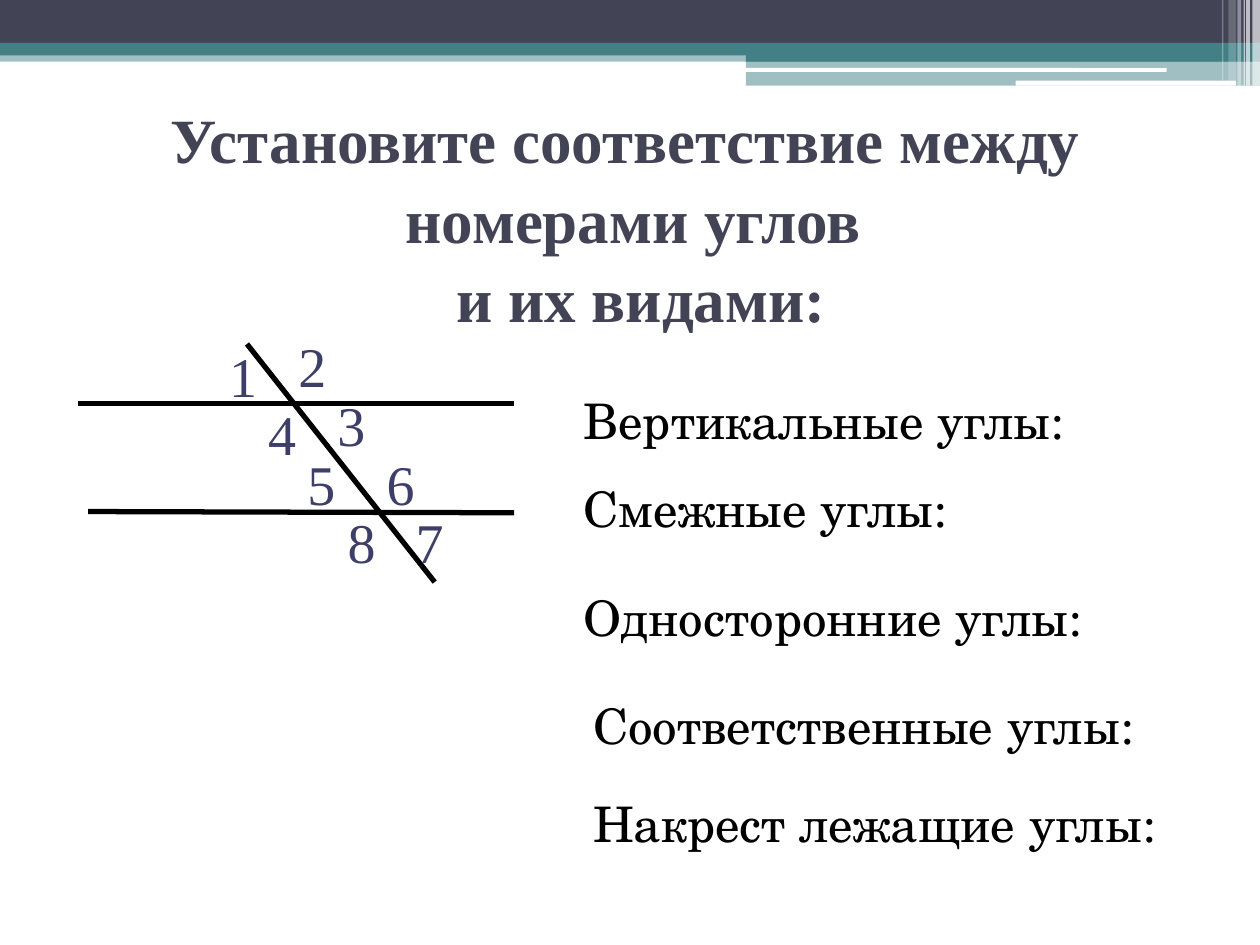
import pptx
import pptx.dml.color
import pptx.enum.shapes
import pptx.enum.text
import pptx.oxml.ns
import pptx.util
from lxml import etree

Inches = pptx.util.Inches
COLORS = {"slate": "424456", "teal": "438086", "white": "FFFFFF",
          "black": "000000", "digit": "3E3F68"}
SERIF, SCHOOL = "Times New Roman", "TeX Gyre Schola"

BANDS = [
    (0, 0.4, 10, 0.09, "teal", 50),
    (0, 0, 10, 0.34, "slate", 100),
    (0, 0.34, 10, 0.1, "teal", 100),
    (5.92, 0.39, 4.08, 0.1, "teal", 100),
    (5.92, 0.48, 4.08, 0.2, "teal", 50),
]
PILLS = [(5.91, 0.54, 3.35, 0.03), (8.06, 0.64, 1.75, 0.04)]
STRIPES = [(9.94, 0.06, 0.68, 65), (9.89, 0.03, 0.68, 65), (9.87, 0.01, 0.68, 60),
           (9.82, 0.03, 0.68, 40), (9.75, 0.06, 0.64, 20), (9.7, 0.01, 0.64, 30)]
LINES = [(0.62, 3.2, 4.08, 3.2), (0.7, 4.06, 4.08, 4.07), (1.96, 2.73, 3.45, 4.62)]
ANGLES = [(1.72, 2.66), (2.27, 2.58), (2.58, 3.05), (2.03, 3.12),
          (2.34, 3.52), (2.97, 3.52), (3.2, 3.98), (2.66, 3.98)]
KINDS = [
    ("Вертикальные углы:", 4.53, 3.05, 4.69),
    ("Смежные углы:", 4.53, 3.75, 4.12),
    ("Односторонние углы:", 4.53, 4.61, 4.35),
    ("Соответственные углы:", 4.61, 5.47, 5.16),
    ("Накрест лежащие углы:", 4.61, 6.25, 4.81),
]


def rgb(name):
    return pptx.dml.color.RGBColor.from_string(COLORS[name])


def write(box, text, *, size, font, color, bold=False, centered=False, spacing=None):
    para = box.text_frame.paragraphs[0]
    para.text = text
    para.line_spacing = spacing
    align = pptx.enum.text.PP_ALIGN
    para.alignment = align.CENTER if centered else align.LEFT
    for span in para.runs:
        span.font.size = pptx.util.Pt(size)
        span.font.name = font
        span.font.bold = bold
        span.font.color.rgb = rgb(color)


class Painter:
    """Holds the line style and the current page, and adds elements to it."""

    def __init__(self, page, line_color="black", line_width=3):
        self.page = page
        self.line_color = line_color
        self.line_width = line_width

    def bar(self, left, top, width, height, color, opacity=100, rounded=False):
        kinds = pptx.enum.shapes.MSO_SHAPE
        kind = kinds.ROUNDED_RECTANGLE if rounded else kinds.RECTANGLE
        bar = self.page.shapes.add_shape(
            kind, Inches(left), Inches(top), Inches(width), Inches(height))
        bar.shadow.inherit = False
        bar.line.fill.background()
        bar.fill.solid()
        bar.fill.fore_color.rgb = rgb(color)
        if opacity < 100:
            tone = bar.fill._xPr.find(".//" + pptx.oxml.ns.qn("a:srgbClr"))
            etree.SubElement(tone, pptx.oxml.ns.qn("a:alpha"), val=str(opacity * 1000))

    def line(self, x1, y1, x2, y2):
        line = self.page.shapes.add_connector(
            pptx.enum.shapes.MSO_CONNECTOR.STRAIGHT,
            Inches(x1), Inches(y1), Inches(x2), Inches(y2))
        line.line.color.rgb = rgb(self.line_color)
        line.line.width = pptx.util.Pt(self.line_width)
        etree.SubElement(line._element.spPr, pptx.oxml.ns.qn("a:effectLst"))

    def label(self, text, left, top, width, height, middle=False, **style):
        box = self.page.shapes.add_textbox(
            Inches(left), Inches(top), Inches(width), Inches(height))
        box.text_frame.word_wrap = True
        anchor = pptx.enum.text.MSO_ANCHOR
        box.text_frame.vertical_anchor = anchor.MIDDLE if middle else anchor.TOP
        write(box, text, **style)


def main():
    deck = pptx.Presentation()
    deck.slide_width, deck.slide_height = Inches(10), Inches(7.5)
    painter = Painter(deck.slides.add_slide(deck.slide_layouts[6]))

    for band in BANDS:
        painter.bar(*band)
    for pill in PILLS:
        painter.bar(*pill, "white", rounded=True)
    for left, width, height, opacity in STRIPES:
        painter.bar(left, 0, width, height, "white", opacity)
    for ends in LINES:
        painter.line(*ends)
    for number, (left, top) in enumerate(ANGLES, 1):
        width = 0.24 if number == 1 else 0.39
        painter.label(str(number), left, top, width, 0.64,
                      size=32, font=SERIF, color="digit")
    for text, left, top, width in KINDS:
        painter.label(text, left, top, width, 0.57,
                      size=28, font=SCHOOL, color="black")
    painter.label("Установите соответствие между \vномерами углов\v и их видами:",
                  0.94, 1.09, 8.17, 1.25, middle=True, size=36, font=SERIF,
                  color="slate", bold=True, centered=True, spacing=1.05)
    deck.save("out.pptx")


if __name__ == "__main__":
    main()
